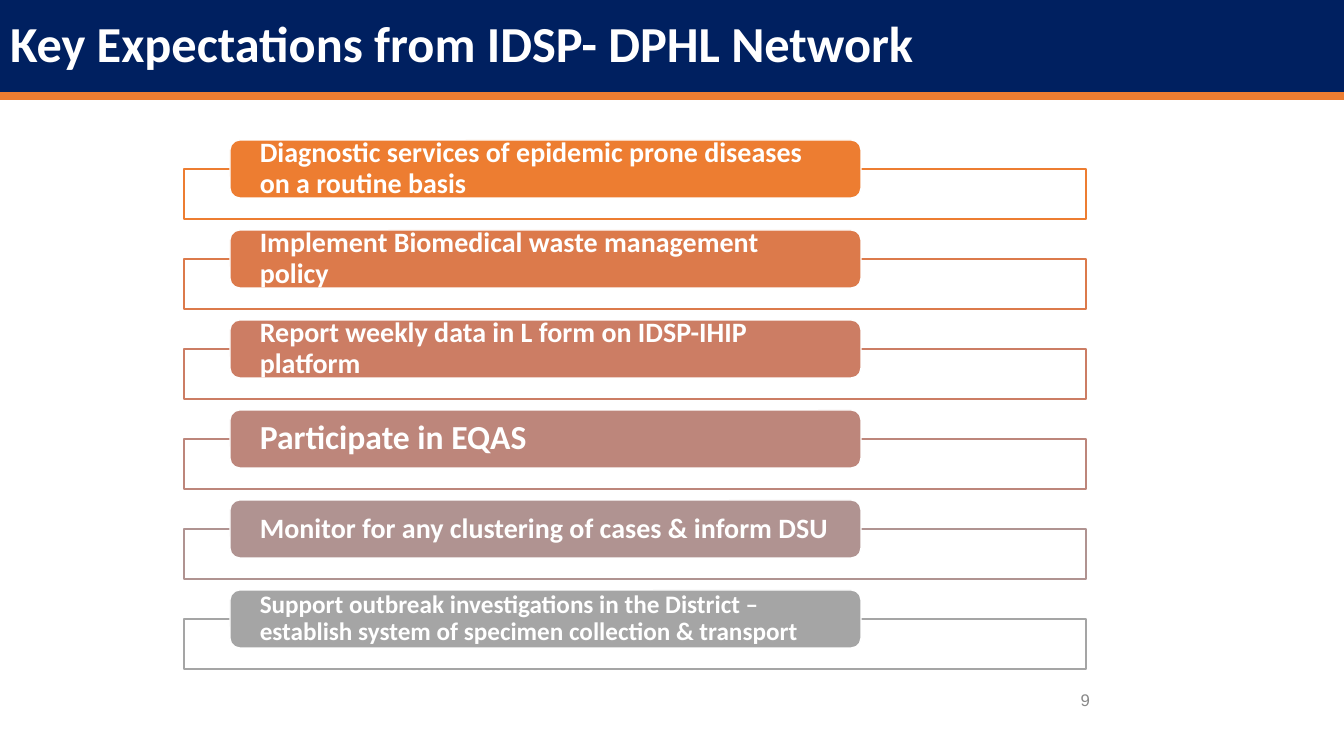
from pptx import Presentation
from pptx import util as u
from pptx.dml.color import RGBColor
from pptx.enum import shapes, text

EXPECTATIONS = [
    ("Diagnostic services of epidemic prone diseases on a routine basis", 20, "ED7D31"),
    ("Implement Biomedical waste management policy", 20, "DC7A4B"),
    ("Report weekly data in L form on IDSP-IHIP platform", 20, "CC7D64"),
    ("Participate in EQAS", 24, "BD867B"),
    ("Monitor for any clustering of cases & inform DSU", 20, "B09391"),
    ("Support outbreak investigations in the District – "
     "establish system of specimen collection & transport", 18, "A5A5A5"),
]
PITCH = 90


def px(length):
    return u.Emu(round(length * 914400 / 100.8))


def color(code):
    return RGBColor.from_string(code)


def apply(target, values):
    for name, value in values.items():
        setattr(target, name, value)


class SlideBuilder:
    white, navy, orange, grey = "FFFFFF", "002060", "ED7D31", "898989"
    font = "Calibri"

    def __init__(self, deck):
        self.page = deck.slides.add_slide(deck.slide_layouts[5])

    def place(self, box, area):
        apply(box, dict(zip(("left", "top", "width", "height"), map(px, area))))

    def label(self, box, words, size, code, inset=(10, 5), font=None, bold=True,
              align=text.PP_ALIGN.LEFT, spacing=0.9):
        side, edge = map(px, inset)
        frame = box.text_frame
        apply(frame, {
            "word_wrap": True, "auto_size": text.MSO_AUTO_SIZE.NONE,
            "vertical_anchor": text.MSO_ANCHOR.MIDDLE,
            "margin_left": side, "margin_right": side,
            "margin_top": edge, "margin_bottom": edge,
        })
        para = frame.paragraphs[0]
        apply(para, {"alignment": align, "line_spacing": spacing})
        span = para.add_run()
        span.text = words
        apply(span.font, {"size": u.Pt(size), "bold": bold, "name": font or self.font})
        span.font.color.rgb = color(code)

    def title(self, words, area):
        box = self.page.shapes.title
        self.place(box, area)
        box.fill.solid()
        box.fill.fore_color.rgb = color(self.navy)
        self.label(box, words, 36, self.white)

    def shape(self, kind, area, fill, line):
        box = self.page.shapes.add_shape(kind, *map(px, area))
        box.shadow.inherit = False
        box.fill.solid()
        box.fill.fore_color.rgb = color(fill)
        box.line.color.rgb = color(line)
        box.line.width = u.Pt(1)
        return box

    def expectation(self, top, words, size, code):
        kind = shapes.MSO_SHAPE
        self.shape(kind.RECTANGLE, (184, top + 29, 902, 50), self.white, code)
        pill = self.shape(kind.ROUNDED_RECTANGLE, (230, top, 631, 58), code, self.white)
        self.label(pill, words, size, self.white, inset=(27, 3))

    def number(self, words, area):
        box = self.page.shapes.add_textbox(*map(px, area))
        self.label(box, words, 12, self.grey, font="Arial", bold=False,
                   align=text.PP_ALIGN.RIGHT, spacing=1.0)


def main():
    deck = Presentation()
    apply(deck, {"slide_width": px(1344), "slide_height": px(756)})
    slide = SlideBuilder(deck)
    slide.title("Key Expectations from IDSP- DPHL Network", (0, 0, 1344, 92))
    slide.shape(shapes.MSO_SHAPE.RECTANGLE, (0, 93, 1344, 6), slide.orange, slide.orange)
    for index, (words, size, code) in enumerate(EXPECTATIONS):
        slide.expectation(140 + index * PITCH, words, size, code)
    slide.number("9", (865, 680, 235, 40))
    deck.save("out.pptx")


if __name__ == "__main__":
    main()
